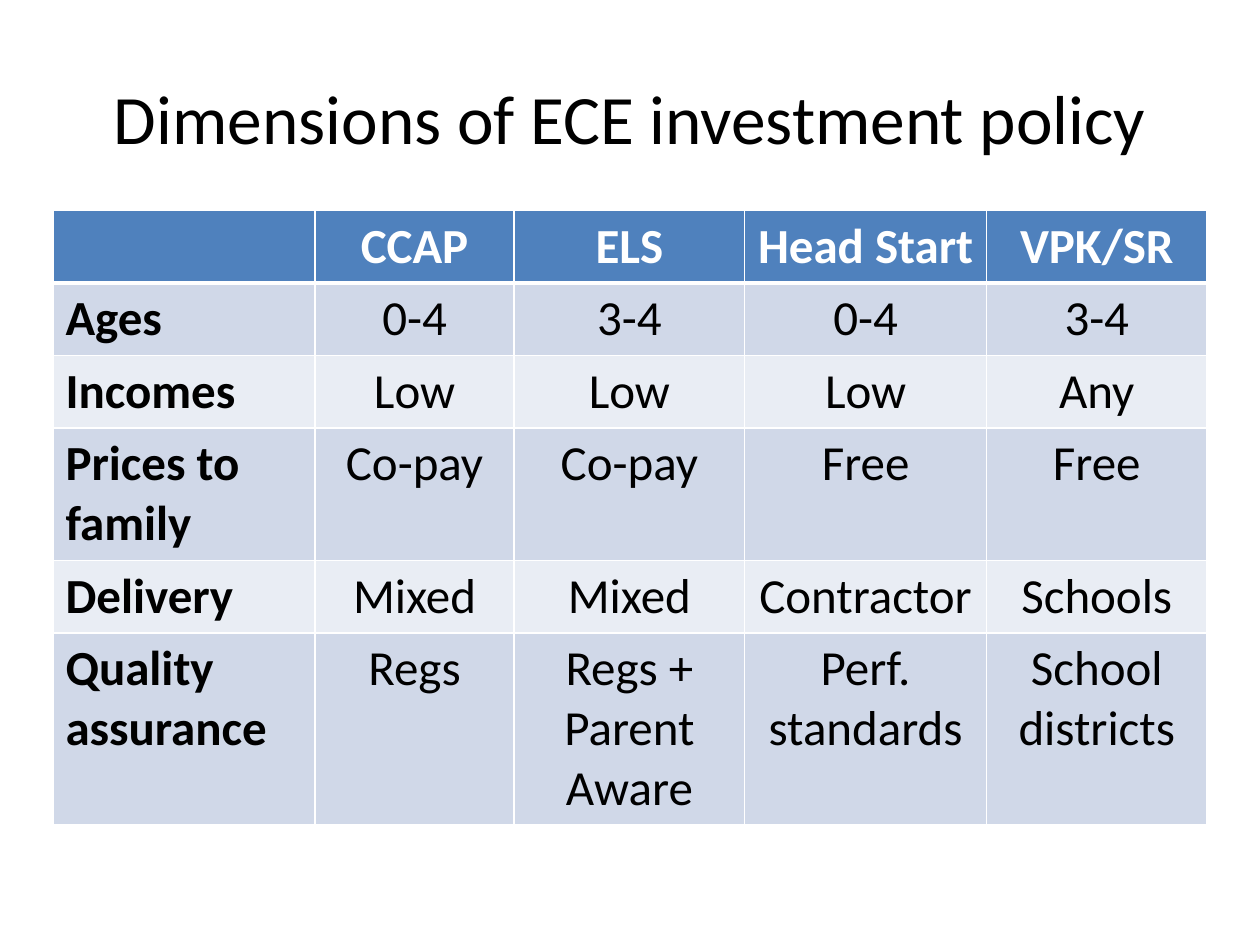
from dataclasses import dataclass

import pptx
import pptx.dml.color
import pptx.enum.text
import pptx.oxml
import pptx.oxml.ns
import pptx.util
from pptx.util import Inches

FONT = "Calibri"
WHITE = "FFFFFF"
BLACK = "000000"
HEADER_FILL = "4F81BD"
BAND_FILLS = ("D0D8E8", "E9EDF4")
THIN, THICK = 1, 3


@dataclass(frozen=True)
class Dimension:
    label: str
    values: tuple[str, ...]


PROGRAMS = Dimension("", ("CCAP", "ELS", "Head Start", "VPK/SR"))
DIMENSIONS = (
    Dimension("Ages", ("0-4", "3-4", "0-4", "3-4")),
    Dimension("Incomes", ("Low", "Low", "Low", "Any")),
    Dimension("Prices to family", ("Co-pay", "Co-pay", "Free", "Free")),
    Dimension("Delivery", ("Mixed", "Mixed", "Contractor", "Schools")),
    Dimension(
        "Quality assurance",
        ("Regs", "Regs + Parent Aware", "Perf. standards", "School districts"),
    ),
)
COLUMN_WIDTHS = (2.08, 1.58, 1.83, 1.92, 1.75)
ROW_HEIGHT = 0.41


def set_color(color_format, value: str) -> None:
    color_format.rgb = pptx.dml.color.RGBColor.from_string(value)


def format_text(text_frame, size: float, color: str, bold: bool, centred: bool) -> None:
    align = pptx.enum.text.PP_ALIGN
    for paragraph in text_frame.paragraphs:
        paragraph.alignment = align.CENTER if centred else align.LEFT
        for run in paragraph.runs:
            run.font.name = FONT
            run.font.size = pptx.util.Pt(size)
            run.font.bold = bold
            set_color(run.font.color, color)


def set_borders(cell, top: int, bottom: int) -> None:
    properties = cell._tc.get_or_add_tcPr()
    for side, points in (("L", THIN), ("R", THIN), ("T", top), ("B", bottom)):
        properties.append(pptx.oxml.parse_xml(
            f'<a:ln{side} {pptx.oxml.ns.nsdecls("a")} w="{pptx.util.Pt(points)}">'
            f'<a:solidFill><a:srgbClr val="{WHITE}"/></a:solidFill></a:ln{side}>'
        ))


def draw_row(table, row: int, dimension: Dimension) -> None:
    header = row == 0
    table.rows[row].height = Inches(ROW_HEIGHT)
    for column, wording in enumerate((dimension.label, *dimension.values)):
        cell = table.cell(row, column)
        cell.text_frame.text = wording
        format_text(
            cell.text_frame, 28, WHITE if header else BLACK,
            bold=header or column == 0, centred=column > 0,
        )
        set_borders(cell, THICK if row == 1 else THIN, THICK if header else THIN)
        cell.fill.solid()
        set_color(cell.fill.fore_color, HEADER_FILL if header else BAND_FILLS[(row - 1) % 2])


def draw_policy_table(slide) -> None:
    rows = (PROGRAMS, *DIMENSIONS)
    height = Inches(4.8)
    frame = slide.shapes.add_table(
        len(rows), len(COLUMN_WIDTHS),
        Inches(0.42), Inches(1.67), Inches(sum(COLUMN_WIDTHS)), height,
    )
    for column, width in zip(frame.table.columns, COLUMN_WIDTHS):
        column.width = Inches(width)
    for row, dimension in enumerate(rows):
        draw_row(frame.table, row, dimension)
    frame.height = height


def main() -> None:
    presentation = pptx.Presentation()
    presentation.slide_width = Inches(10)
    presentation.slide_height = Inches(7.5)
    slide = presentation.slides.add_slide(presentation.slide_layouts[5])

    title = slide.shapes.title
    title.left, title.top = Inches(0.5), Inches(0.3)
    title.width, title.height = Inches(9), Inches(1.25)
    title.text_frame.text = "Dimensions of ECE investment policy"
    title.text_frame.vertical_anchor = pptx.enum.text.MSO_ANCHOR.MIDDLE
    format_text(title.text_frame, 39.6, BLACK, bold=False, centred=True)

    draw_policy_table(slide)
    presentation.save("out.pptx")


if __name__ == "__main__":
    main()
